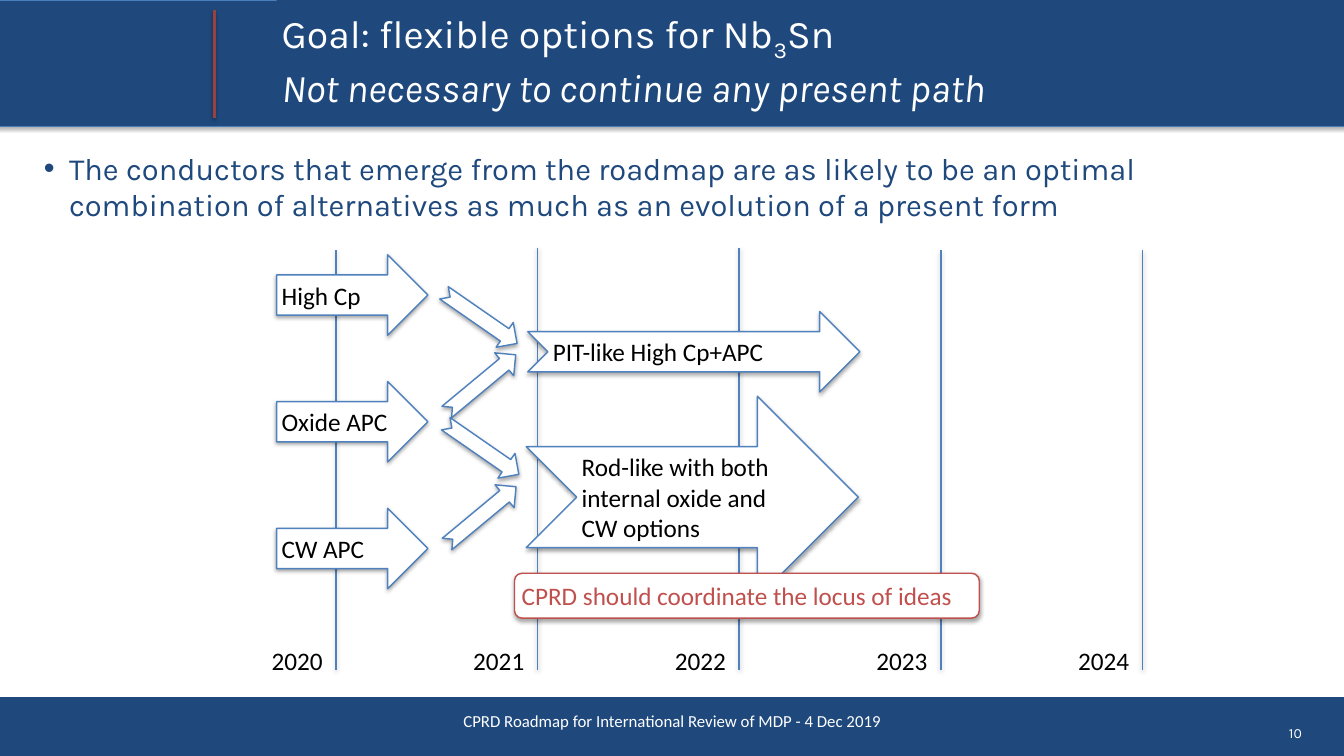
"""Build the conductor roadmap slide with its timeline, option arrows and callout."""

from dataclasses import dataclass
from typing import Any, NamedTuple, Optional

from lxml.etree import SubElement
from pptx import Presentation
from pptx.dml.color import RGBColor as Color
from pptx.enum.shapes import MSO_CONNECTOR as Connector, MSO_SHAPE as Preset
from pptx.enum.text import MSO_ANCHOR as Anchor, PP_ALIGN as Align
from pptx.oxml.ns import qn
from pptx.util import Pt


@dataclass(frozen=True)
class Theme:
    navy: Color = Color.from_string("1F497D")
    band_edge: Color = Color.from_string("4A7EBB")
    blue: Color = Color.from_string("4F81BD")
    red: Color = Color.from_string("C0504D")
    divider: Color = Color.from_string("9A403E")
    white: Color = Color.from_string("FFFFFF")
    black: Color = Color.from_string("000000")
    heading_font: str = "Karla"
    label_font: str = "Calibri"
    title_size: int = 56
    body_size: int = 44
    label_size: int = 36
    footer_size: int = 24
    number_size: int = 20


class Box(NamedTuple):
    left: float
    top: float
    width: float
    height: float

    def lengths(self) -> list:
        return [Pt(value) for value in self]


@dataclass(frozen=True)
class Block:
    preset: Any
    box: Box
    text: str = ""
    rotation: float = 0
    color: Optional[Color] = None
    text_color: Optional[Color] = None


THEME = Theme()
INSET = 7.2
YEARS = range(2020, 2025)
YEAR_LEFT, YEAR_STEP = 480, 288
LINE_TOPS = (357, 354, 354, 357, 357)
LINE_BOTTOM = 957
OPTIONS = ("High Cp", "Oxide APC", "CW APC")
OPTION_TOP, OPTION_STEP = 364, 181
UP, DOWN = 320.3, 34.7

BLOCKS = [
    Block(Preset.RIGHT_ARROW, Box(395.3, OPTION_TOP + index * OPTION_STEP, 216, 115), name)
    for index, name in enumerate(OPTIONS)
] + [
    Block(Preset.NOTCHED_RIGHT_ARROW, Box(754, 445, 474.5, 115), "PIT-like High Cp+APC"),
    Block(Preset.NOTCHED_RIGHT_ARROW, Box(751.7, 566, 474.5, 288.5),
          "Rod-like with both internal oxide and CW options"),
    Block(Preset.NOTCHED_RIGHT_ARROW, Box(623.5, 526.5, 128, 42.5), rotation=UP),
    Block(Preset.NOTCHED_RIGHT_ARROW, Box(623, 433, 127, 43), rotation=DOWN),
    Block(Preset.NOTCHED_RIGHT_ARROW, Box(625.5, 620, 127, 43), rotation=DOWN),
    Block(Preset.NOTCHED_RIGHT_ARROW, Box(624, 715, 128, 42.5), rotation=UP),
    Block(Preset.ROUNDED_RECTANGLE, Box(735, 819, 664, 64),
          "CPRD should coordinate the locus of ideas",
          color=THEME.red, text_color=THEME.red),
]


def apply_format(target: Any, values: dict) -> None:
    for name, value in values.items():
        setattr(target, name, value)


def add_shadow(shape: Any, opacity: int = 35) -> None:
    properties = shape._element.spPr
    effects = properties.find(qn("a:effectLst"))
    if effects is None:
        effects = SubElement(properties, qn("a:effectLst"))
    shadow = SubElement(effects, qn("a:outerShdw"), blurRad=str(Pt(6)), dist=str(Pt(3)),
                        dir="5400000", rotWithShape="0")
    color = SubElement(shadow, qn("a:srgbClr"), val="000000")
    SubElement(color, qn("a:alpha"), val=str(opacity * 1000))


def add_block(slide: Any, preset: Any, box: Box, fill: Color,
              line: Optional[Color] = None, weight: float = 2) -> Any:
    shape = slide.shapes.add_shape(preset, *box.lengths())
    shape.shadow.inherit = False
    shape.fill.solid()
    shape.fill.fore_color.rgb = fill
    if line is None:
        shape.line.fill.background()
    else:
        shape.line.color.rgb = line
        shape.line.width = Pt(weight)
        add_shadow(shape)
    return shape


def add_rule(slide: Any, left: float, bottom: float, top: float,
             color: Color, weight: float, opacity: int = 35) -> None:
    rule = slide.shapes.add_connector(
        Connector.STRAIGHT, Pt(left), Pt(bottom), Pt(left), Pt(top))
    rule.line.color.rgb = color
    rule.line.width = Pt(weight)
    add_shadow(rule, opacity)


def prepare_paragraph(shape: Any, align: Any = Align.LEFT, anchor: Any = Anchor.MIDDLE,
                      wrap: bool = True) -> Any:
    frame = shape.text_frame
    inset = Pt(INSET)
    apply_format(frame, {
        "word_wrap": wrap, "vertical_anchor": anchor, "margin_left": inset,
        "margin_top": inset, "margin_right": inset, "margin_bottom": inset})
    paragraph = frame.paragraphs[0]
    paragraph.alignment = align
    return paragraph


def add_run(paragraph: Any, text: str, size: float, font: str, color: Color,
            italic: bool = False) -> Any:
    run = paragraph.add_run()
    run.text = text
    apply_format(run.font, {"size": Pt(size), "name": font, "italic": italic})
    run.font.color.rgb = color
    return run


def add_text(slide: Any, box: Box, text: str, size: float, font: str, color: Color,
             **layout: Any) -> Any:
    shape = slide.shapes.add_textbox(*box.lengths())
    paragraph = prepare_paragraph(shape, **layout)
    add_run(paragraph, text, size, font, color)
    return paragraph


def add_title(slide: Any) -> None:
    shape = add_block(slide, Preset.RECTANGLE, Box(395.3, -2, 1527, 174.5), THEME.navy)
    paragraph = prepare_paragraph(shape)
    style = (THEME.title_size, THEME.heading_font, THEME.white)
    add_run(paragraph, "Goal: flexible options for Nb", *style)
    subscript = add_run(paragraph, "3", *style)
    subscript._r.get_or_add_rPr().set("baseline", "-25000")
    add_run(paragraph, "Sn", *style)
    paragraph.add_line_break()
    add_run(paragraph, "Not necessary to continue any present path", *style, italic=True)


def add_bullet(paragraph: Any, indent: float) -> None:
    properties = paragraph._p.get_or_add_pPr()
    for name, value in {"marL": Pt(indent), "indent": -Pt(indent)}.items():
        properties.set(name, str(value))
    SubElement(properties, qn("a:buFont"), typeface="Arial")
    SubElement(properties, qn("a:buChar"), char="•")


def add_timeline(slide: Any) -> None:
    for index, (year, top) in enumerate(zip(YEARS, LINE_TOPS)):
        left = YEAR_LEFT + index * YEAR_STEP
        add_rule(slide, left, LINE_BOTTOM, top, THEME.blue, 2)
        add_text(slide, Box(left - 99, 915, 88.5, 58), str(year), THEME.label_size,
                 THEME.label_font, THEME.black, anchor=Anchor.TOP, wrap=False)


def main() -> None:
    presentation = Presentation()
    apply_format(presentation, {"slide_width": Pt(1920), "slide_height": Pt(1080)})
    slide = presentation.slides.add_slide(presentation.slide_layouts[6])
    add_block(slide, Preset.RECTANGLE, Box(-3, 996, 1925, 85.5), THEME.navy)
    add_block(slide, Preset.RECTANGLE, Box(-5, 0, 1929, 180), THEME.navy, THEME.band_edge, 1)
    add_rule(slide, 306, 168, 14.4, THEME.divider, 4, opacity=38)
    add_title(slide)
    add_text(slide, Box(1829, 1028, 38, 37), "10", THEME.number_size,
             THEME.heading_font, THEME.white, align=Align.RIGHT, wrap=False)
    body = add_text(
        slide, Box(55.5, 206, 1754, 134.5),
        "The conductors that emerge from the roadmap are as likely to be an optimal "
        "combination of alternatives as much as an evolution of a present form",
        THEME.body_size, THEME.heading_font, THEME.navy, anchor=Anchor.TOP)
    add_bullet(body, 36)
    add_text(slide, Box(636, 1001, 648, 57.5),
             "CPRD Roadmap for International Review of MDP - 4 Dec 2019",
             THEME.footer_size, THEME.label_font, THEME.white, align=Align.CENTER)
    add_timeline(slide)
    for block in BLOCKS:
        shape = add_block(slide, block.preset, block.box, THEME.white, block.color or THEME.blue)
        shape.rotation = block.rotation
        if block.text:
            add_run(prepare_paragraph(shape), block.text, THEME.label_size,
                    THEME.label_font, block.text_color or THEME.black)
    presentation.save("out.pptx")


if __name__ == "__main__":
    main()
